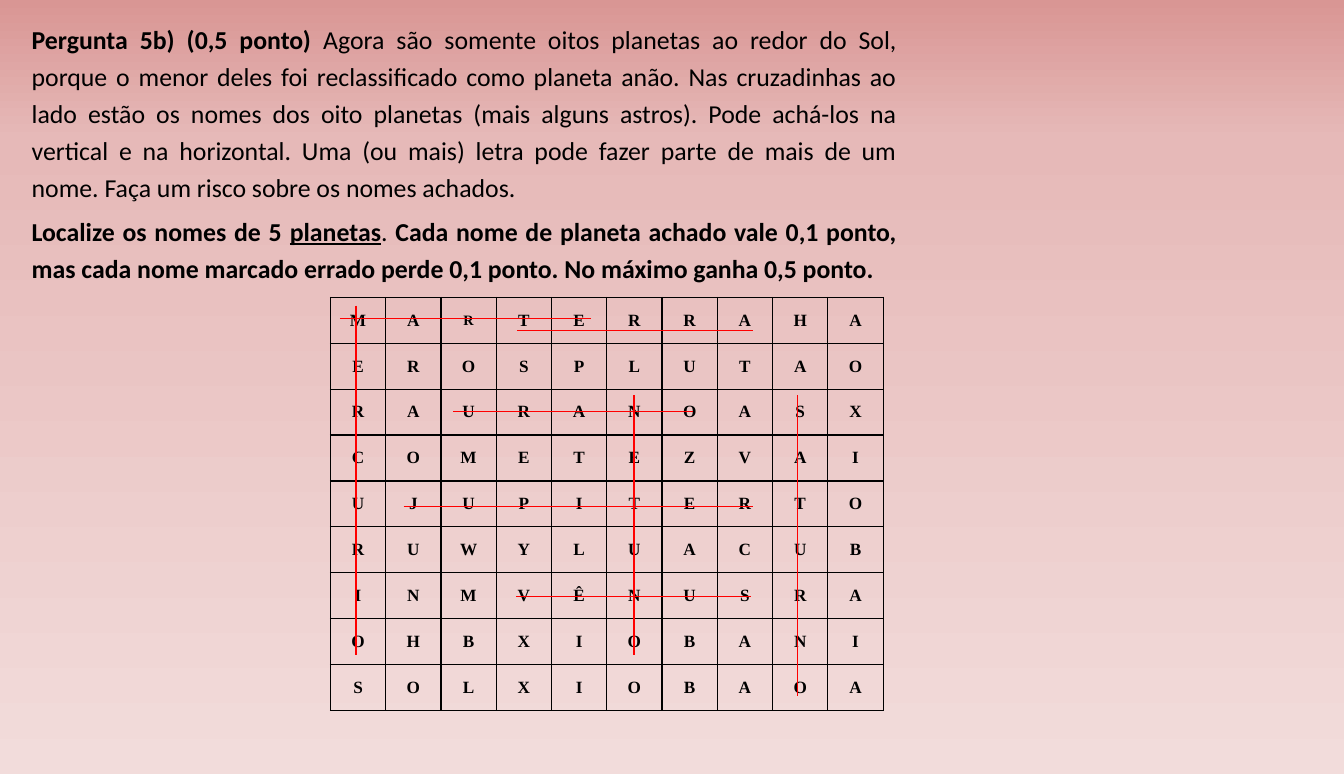
from copy import deepcopy
from dataclasses import dataclass

from pptx import Presentation, util as u
from pptx.dml.color import RGBColor
from pptx.enum import shapes, text
from pptx.oxml import parse_xml
from pptx.oxml.ns import nsdecls, qn

# Each question: top and height in cm, then spans of (text, bold, underline)
QUESTIONS = [
    (0.30, 4.80, [
        ("Pergunta 5b) (0,5 ponto)", True, False),
        (" Agora são somente oitos planetas ao redor do Sol, porque o menor deles foi "
         "reclassificado como planeta anão. Nas cruzadinhas ao lado estão os nomes dos "
         "oito planetas (mais alguns astros). Pode achá-los na vertical e na horizontal. "
         "Uma (ou mais) letra pode fazer parte de mais de um nome. Faça um risco sobre "
         "os nomes achados.", False, False),
    ]),
    (5.03, 2.03, [
        ("Localize os nomes de 5 ", True, False),
        ("planetas", True, True),
        (". ", False, False),
        ("Cada nome de planeta achado vale 0,1 ponto, mas cada nome marcado errado perde "
         "0,1 ponto. No máximo ganha 0,5 ponto.", True, False),
    ]),
]

LETTERS = [
    "MARTERRAHA",
    "EROSPLUTAO",
    "RAURANOASX",
    "COMETEZVAI",
    "UJUPITERTO",
    "RUWYLUACUB",
    "INMVÊNUSRA",
    "OHBXIOBANI",
    "SOLXIOBAOA",
]
SMALL_LETTER = (0, 2)

# Strokes over the names found, in cm: (y, from x, to x) and (x, from y, to y)
ACROSS = {
    "MARTE": (7.85, 8.36, 14.53),
    "TERRA": (8.13, 12.73, 18.54),
    "URANO": (10.13, 11.15, 17.04),
    "JÚPITER": (12.47, 9.93, 18.54),
    "VÊNUS": (14.68, 12.70, 18.49),
}
DOWN = {
    "MERCÚRIO": (8.76, 7.52, 16.13),
    "NETUNO": (15.60, 9.73, 16.13),
    "SATURNO": (19.63, 9.73, 17.12),
}

TEXT_LEFT, TEXT_WIDTH = 0.53, 21.79
GRID_LEFT, GRID_TOP = 8.13, 7.32
CELL_WIDTH, CELL_HEIGHT = 1.36, 1.13


@dataclass(frozen=True)
class Theme:
    ink: str = "000000"
    stroke: str = "FF0000"
    gradient: tuple = ((0, "D99694"), (0.18, "E6B9B8"), (1, "F2DCDB"))
    body_font: str = "Calibri"
    grid_font: str = "Times New Roman"
    body_size: int = 18
    letter_size: int = 12
    small_size: int = 10
    border: int = 1
    stroke_width: float = 0.75


THEME = Theme()


def set_font(font, name, size):
    font.name = name
    font.size = u.Pt(size)
    font.color.rgb = RGBColor.from_string(THEME.ink)


def paint_background(page):
    fill = page.background.fill
    fill.gradient()
    fill.gradient_angle = 270
    stop_list = page.element.find(".//" + qn("a:gsLst"))
    stop_list.append(deepcopy(stop_list[-1]))
    for stop, (position, color) in zip(fill.gradient_stops, THEME.gradient):
        stop.position = position
        stop.color.rgb = RGBColor.from_string(color)


def add_question(page, top, height, spans):
    box = page.shapes.add_textbox(u.Cm(TEXT_LEFT), u.Cm(top), u.Cm(TEXT_WIDTH), u.Cm(height))
    frame = box.text_frame
    frame.word_wrap = True
    frame.auto_size = text.MSO_AUTO_SIZE.SHAPE_TO_FIT_TEXT
    para = frame.paragraphs[0]
    para.alignment = text.PP_ALIGN.JUSTIFY
    para.line_spacing = 1.2
    for words, bold, underline in spans:
        span = para.add_run()
        span.text = words
        set_font(span.font, THEME.body_font, THEME.body_size)
        span.font.bold = bold
        span.font.underline = underline


def add_borders(cell):
    properties = cell._tc.get_or_add_tcPr()
    for side in ("lnL", "lnR", "lnT", "lnB"):
        properties.append(parse_xml(
            f'<a:{side} {nsdecls("a")} w="{u.Pt(THEME.border)}"><a:solidFill>'
            f'<a:srgbClr val="{THEME.ink}"/></a:solidFill></a:{side}>'))


def fill_cell(cell, letter, size):
    add_borders(cell)
    cell.fill.background()
    cell.vertical_anchor = text.MSO_ANCHOR.MIDDLE
    cell.margin_left = cell.margin_right = u.Cm(0.12)
    cell.margin_top = cell.margin_bottom = 0
    cell.text = letter
    para = cell.text_frame.paragraphs[0]
    para.alignment = text.PP_ALIGN.CENTER
    set_font(para.font, THEME.grid_font, size)
    para.font.bold = True


def add_letter_grid(page):
    rows, columns = len(LETTERS), len(LETTERS[0])
    table = page.shapes.add_table(
        rows, columns, u.Cm(GRID_LEFT), u.Cm(GRID_TOP),
        u.Cm(columns * CELL_WIDTH), u.Cm(rows * CELL_HEIGHT)).table
    table.first_row = table.horz_banding = False
    for column in table.columns:
        column.width = u.Cm(CELL_WIDTH)
    for i, letters in enumerate(LETTERS):
        table.rows[i].height = u.Cm(CELL_HEIGHT)
        for j, letter in enumerate(letters):
            size = THEME.small_size if (i, j) == SMALL_LETTER else THEME.letter_size
            fill_cell(table.cell(i, j), letter, size)


def add_stroke(page, *ends):
    stroke = page.shapes.add_connector(shapes.MSO_CONNECTOR.STRAIGHT, *map(u.Cm, ends))
    stroke.line.color.rgb = RGBColor.from_string(THEME.stroke)
    stroke.line.width = u.Pt(THEME.stroke_width)
    stroke.element.spPr.append(parse_xml(f'<a:effectLst {nsdecls("a")}/>'))


def main():
    deck = Presentation()
    deck.slide_width, deck.slide_height = u.Cm(33.07), u.Cm(19.05)
    page = deck.slides.add_slide(deck.slide_layouts.get_by_name("Blank"))
    paint_background(page)
    for question in QUESTIONS:
        add_question(page, *question)
    add_letter_grid(page)
    for y, start, end in ACROSS.values():
        add_stroke(page, start, y, end, y)
    for x, start, end in DOWN.values():
        add_stroke(page, x, start, x, end)
    deck.save("out.pptx")


if __name__ == "__main__":
    main()
